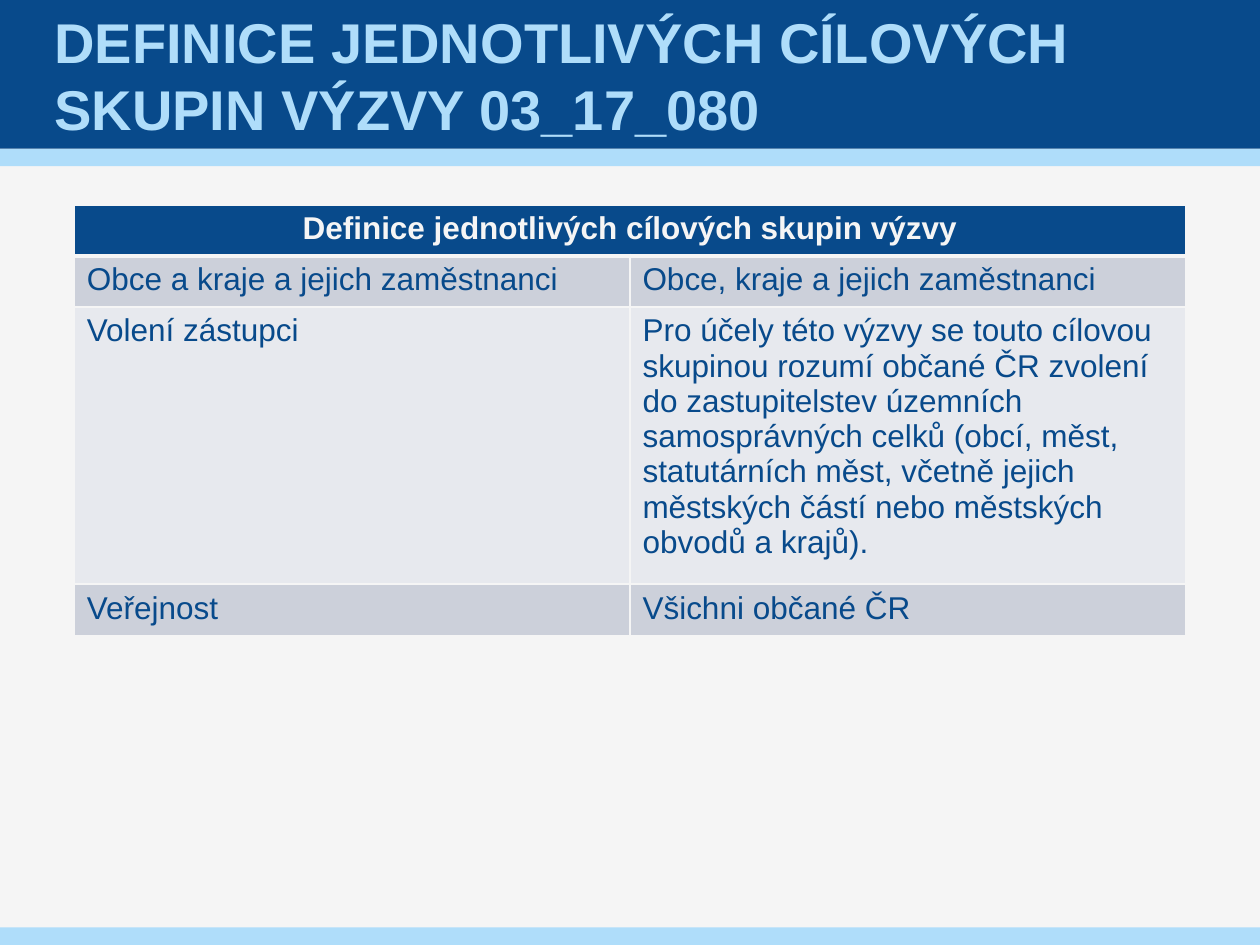
from dataclasses import dataclass
from typing import Any

from lxml import etree
from pptx import Presentation
from pptx.dml.color import RGBColor
from pptx.enum import shapes, text
from pptx.oxml import ns
from pptx.util import Pt


@dataclass(frozen=True)
class Theme:
    background: str = "F5F5F5"
    navy: str = "084A8B"
    sky: str = "AFDDFA"
    odd_row: str = "CCD0DA"
    even_row: str = "E7E9EE"
    font: str = "Arial"
    title_size: float = 32
    table_size: float = 18
    border: float = 1
    header_border: float = 3


@dataclass(frozen=True)
class Band:
    top: float
    height: float
    color: str


THEME = Theme()
SLIDE_WIDTH, SLIDE_HEIGHT = 720, 540
BANDS = [
    Band(85, 10, THEME.sky),
    Band(0, 85, THEME.navy),
    Band(530, 10, THEME.sky),
]
TITLE = "DEFINICE JEDNOTLIVÝCH CÍLOVÝCH SKUPIN VÝZVY 03_17_080"
TABLE_TITLE = "Definice jednotlivých cílových skupin výzvy"
GROUPS = [
    ("Obce a kraje a jejich zaměstnanci", "Obce, kraje a jejich zaměstnanci"),
    (
        "Volení zástupci",
        "Pro účely této výzvy se touto cílovou skupinou rozumí občané ČR zvolení "
        "do zastupitelstev územních samosprávných celků (obcí, měst, statutárních "
        "měst, včetně jejich městských částí nebo městských obvodů a krajů).",
    ),
    ("Veřejnost", "Všichni občané ČR"),
]
ROW_HEIGHTS = [29.2, 29.2, 148.5, 29.2]


def apply_format(target: Any, values: dict[str, Any]) -> None:
    for name, value in values.items():
        setattr(target, name, value)


def paint(fill: Any, color: str) -> None:
    fill.solid()
    fill.fore_color.rgb = RGBColor.from_string(color)


def write(frame: Any, content: str, size: float, color: str, bold: bool, align: Any) -> None:
    paragraph = frame.paragraphs[0]
    paragraph.alignment = align
    run = paragraph.add_run()
    run.text = content
    apply_format(run.font, {"name": THEME.font, "size": Pt(size), "bold": bold})
    run.font.color.rgb = RGBColor.from_string(color)


def draw_band(slide: Any, band: Band) -> None:
    shape = slide.shapes.add_shape(
        shapes.MSO_SHAPE.RECTANGLE, 0, Pt(band.top), Pt(SLIDE_WIDTH), Pt(band.height)
    )
    shape.shadow.inherit = False
    paint(shape.fill, band.color)
    shape.line.fill.background()


def draw_title(slide: Any) -> None:
    frame = slide.shapes.add_textbox(Pt(28), 0, Pt(663), Pt(85)).text_frame
    apply_format(frame, {
        "word_wrap": True,
        "vertical_anchor": text.MSO_ANCHOR.MIDDLE,
        "margin_left": Pt(3),
        "margin_right": Pt(3),
        "margin_top": 0,
        "margin_bottom": 0,
    })
    write(frame, TITLE, THEME.title_size, THEME.sky, True, text.PP_ALIGN.LEFT)


def draw_borders(cell: Any, widths: dict[str, float]) -> None:
    properties = cell._tc.get_or_add_tcPr()
    for position, (side, width) in enumerate(widths.items()):
        line = etree.Element(ns.qn(f"a:ln{side}"), w=str(Pt(width)))
        fill = etree.SubElement(line, ns.qn("a:solidFill"))
        etree.SubElement(fill, ns.qn("a:srgbClr"), val=THEME.background)
        properties.insert(position, line)


def draw_table(slide: Any) -> None:
    table = slide.shapes.add_table(
        len(ROW_HEIGHTS), 2, Pt(42.5), Pt(117), Pt(635), Pt(sum(ROW_HEIGHTS))
    ).table
    apply_format(table, {"horz_banding": False})
    for row, height in zip(table.rows, ROW_HEIGHTS):
        row.height = Pt(height)
    table.cell(0, 0).merge(table.cell(0, 1))
    for row_index, contents in enumerate([(TABLE_TITLE, ""), *GROUPS]):
        header = row_index == 0
        body_fill = THEME.odd_row if row_index % 2 else THEME.even_row
        for column_index, content in enumerate(contents):
            cell = table.cell(row_index, column_index)
            paint(cell.fill, THEME.navy if header else body_fill)
            draw_borders(cell, {
                "L": THEME.border,
                "R": THEME.border,
                "T": THEME.header_border if row_index == 1 else THEME.border,
                "B": THEME.header_border if header else THEME.border,
            })
            if content:
                write(
                    cell.text_frame,
                    content,
                    THEME.table_size,
                    THEME.background if header else THEME.navy,
                    header,
                    text.PP_ALIGN.CENTER if header else text.PP_ALIGN.LEFT,
                )


def main() -> None:
    presentation = Presentation()
    apply_format(presentation, {
        "slide_width": Pt(SLIDE_WIDTH),
        "slide_height": Pt(SLIDE_HEIGHT),
    })
    slide = presentation.slides.add_slide(presentation.slide_layouts[6])
    paint(slide.background.fill, THEME.background)
    for band in BANDS:
        draw_band(slide, band)
    draw_title(slide)
    draw_table(slide)
    presentation.save("out.pptx")


if __name__ == "__main__":
    main()
